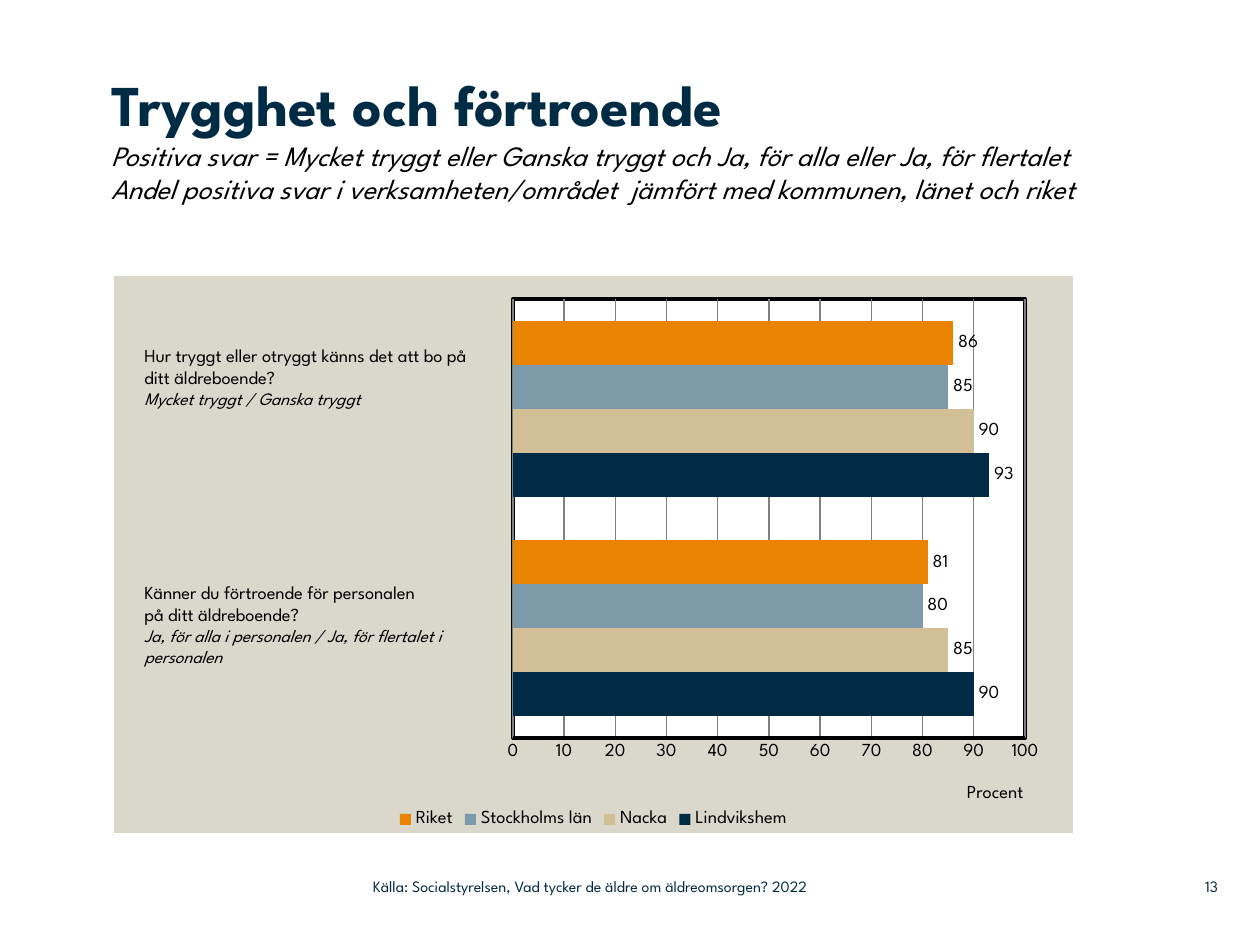
import copy
from dataclasses import dataclass

import lxml.etree
import pptx
import pptx.chart.data
import pptx.dml.color
import pptx.enum.chart
import pptx.enum.text
import pptx.oxml
import pptx.oxml.ns
import pptx.util

PX = 914400 / 126
qn = pptx.oxml.ns.qn
Color = pptx.dml.color.RGBColor.from_string
Pt = pptx.util.Pt


@dataclass(frozen=True)
class Theme:
    font: str = "League Spartan"
    navy: str = "002B45"
    sand: str = "D3BF96"
    steel: str = "7D9AAA"
    orange: str = "E98300"
    panel: str = "DAD7CB"
    grid: str = "808080"
    black: str = "000000"
    white: str = "FFFFFF"
    title_size: float = 33
    subtitle_size: float = 16
    body_size: float = 10.5
    answer_size: float = 10
    footer_size: float = 9


theme = Theme()


def format_font(font, size, color, bold=False, italic=False):
    font.name = theme.font
    font.size = Pt(size)
    font.bold = bold
    font.italic = italic
    font.color.rgb = Color(color)


def set_layout(layout, x, y, width=None, height=None):
    """Fill a c:layout element with fractions of the chart area."""
    manual = lxml.etree.SubElement(layout, qn("c:manualLayout"))
    settings = [("xMode", "edge"), ("yMode", "edge"), ("x", x), ("y", y)]
    if width is not None:
        settings.insert(0, ("layoutTarget", "inner"))
        settings += [("w", width), ("h", height)]
    for name, value in settings:
        lxml.etree.SubElement(manual, qn(f"c:{name}")).set("val", str(value))


presentation = pptx.Presentation()
presentation.slide_width = pptx.util.Inches(10)
presentation.slide_height = pptx.util.Inches(7.5)
slide = presentation.slides.add_slide(presentation.slide_layouts[5])

# Title with two explanatory lines
title = slide.shapes.title
title.left, title.top, title.width, title.height = [int(v * PX) for v in (111, 69, 977, 207)]
frame = title.text_frame
frame.margin_left = frame.margin_top = frame.margin_right = frame.margin_bottom = 0
frame.auto_size = pptx.enum.text.MSO_AUTO_SIZE.NONE
frame.vertical_anchor = pptx.enum.text.MSO_ANCHOR.TOP
frame.word_wrap = True
paragraph = frame.paragraphs[0]
paragraph.text = (
    "Trygghet och förtroende\v"
    "Positiva svar = Mycket tryggt eller Ganska tryggt och Ja, för alla eller Ja, för flertalet\v"
    "Andel positiva svar i verksamheten/området  jämfört med kommunen, länet och riket"
)
paragraph.alignment = pptx.enum.text.PP_ALIGN.LEFT
heading, *explanations = paragraph.runs
format_font(heading.font, theme.title_size, theme.navy, bold=True)
for run in explanations:
    format_font(run.font, theme.subtitle_size, theme.black, italic=True)
# Line breaks take the size of the explanatory lines
for line_break in paragraph._p.findall(qn("a:br")):
    line_break.append(copy.deepcopy(explanations[0]._r.find(qn("a:rPr"))))

# Bar chart
series_colors = {
    "Lindvikshem": ((90, 93), theme.navy),
    "Nacka": ((85, 90), theme.sand),
    "Stockholms län": ((80, 85), theme.steel),
    "Riket": ((81, 86), theme.orange),
}
chart_data = pptx.chart.data.CategoryChartData()
chart_data.categories = ["1", "2"]
for name, (values, color) in series_colors.items():
    chart_data.add_series(name, values)
chart = slide.shapes.add_chart(
    pptx.enum.chart.XL_CHART_TYPE.BAR_CLUSTERED,
    *[int(v * PX) for v in (114, 276, 959, 557)], chart_data,
).chart
format_font(chart.font, theme.body_size, theme.black)
chart.has_title = False
chart.has_legend = True
chart.legend.position = pptx.enum.chart.XL_LEGEND_POSITION.BOTTOM
chart.legend.include_in_layout = False
format_font(chart.legend.font, theme.body_size, theme.black)

plot = chart.plots[0]
plot.gap_width = 100
plot.vary_by_categories = False
for series, (values, color) in zip(plot.series, series_colors.values()):
    series.format.fill.solid()
    series.format.fill.fore_color.rgb = Color(color)
    labels = series.data_labels
    labels.show_value = True
    labels.position = pptx.enum.chart.XL_LABEL_POSITION.OUTSIDE_END
    format_font(labels.font, theme.body_size, theme.black)

chart.category_axis.visible = False
axis = chart.value_axis
axis.minimum_scale, axis.maximum_scale, axis.major_unit = 0, 100, 10
axis.major_tick_mark = pptx.enum.chart.XL_TICK_MARK.NONE
axis.minor_tick_mark = pptx.enum.chart.XL_TICK_MARK.NONE
axis.format.line.color.rgb = Color(theme.black)
axis.format.line.width = Pt(2)
axis.has_major_gridlines = True
axis.major_gridlines.format.line.color.rgb = Color(theme.grid)
axis.major_gridlines.format.line.width = Pt(0.75)
format_font(axis.tick_labels.font, theme.body_size, theme.black)
axis.axis_title.text_frame.text = "Procent"
format_font(axis.axis_title.text_frame.paragraphs[0].runs[0].font, theme.body_size, theme.black)
set_layout(axis.axis_title._element.find(qn("c:layout")), 0.886, 0.905)

# Plot position, then fills and borders of the chart and plot areas
chart_element = chart.element.find(qn("c:chart"))
plot_area = chart_element.find(qn("c:plotArea"))
for layout in plot_area.findall(qn("c:layout")):
    plot_area.remove(layout)
plot_layout = lxml.etree.Element(qn("c:layout"))
plot_area.insert(0, plot_layout)
set_layout(plot_layout, 0.416, 0.041, 0.534, 0.789)
solid = '<a:solidFill><a:srgbClr val="{}"/></a:solidFill>'
plot_border = f'<a:ln w="{Pt(2)}">{solid.format(theme.black)}</a:ln>'
area_xml = f'<c:spPr {pptx.oxml.ns.nsdecls("c", "a")}>{solid}{{}}</c:spPr>'
plot_area.append(pptx.oxml.parse_xml(area_xml.format(theme.white, plot_border)))
chart_element.addnext(pptx.oxml.parse_xml(area_xml.format(theme.panel, "<a:ln><a:noFill/></a:ln>")))

# Questions beside the bars, the last line of each being the positive answers
questions = [
    ((132, 338, 376, 102), ["Hur tryggt eller otryggt känns det att bo på ditt äldreboende?",
                            "Mycket tryggt / Ganska tryggt"]),
    ((132, 575, 378, 123), ["Känner du förtroende för personalen", "på ditt äldreboende?",
                            "Ja, för alla i personalen / Ja, för flertalet i personalen"]),
]
for box, lines in questions:
    frame = slide.shapes.add_textbox(*[int(v * PX) for v in box]).text_frame
    frame.word_wrap = True
    frame.text = "\n".join(lines)
    *question_paragraphs, answer = frame.paragraphs
    for paragraph in question_paragraphs:
        format_font(paragraph.runs[0].font, theme.body_size, theme.black)
    format_font(answer.runs[0].font, theme.answer_size, theme.black, italic=True)

# Source and page number
footers = [
    ((373, 868, 558, 37), "Källa: Socialstyrelsen, Vad tycker de äldre om äldreomsorgen? 2022",
     pptx.enum.text.PP_ALIGN.LEFT),
    ((1159, 868, 59, 37), "13", pptx.enum.text.PP_ALIGN.RIGHT),
]
for box, text, alignment in footers:
    frame = slide.shapes.add_textbox(*[int(v * PX) for v in box]).text_frame
    frame.margin_left = frame.margin_top = frame.margin_right = frame.margin_bottom = 0
    frame.vertical_anchor = pptx.enum.text.MSO_ANCHOR.MIDDLE
    frame.word_wrap = True
    frame.text = text
    frame.paragraphs[0].alignment = alignment
    format_font(frame.paragraphs[0].runs[0].font, theme.footer_size, theme.navy)

presentation.save("out.pptx")
